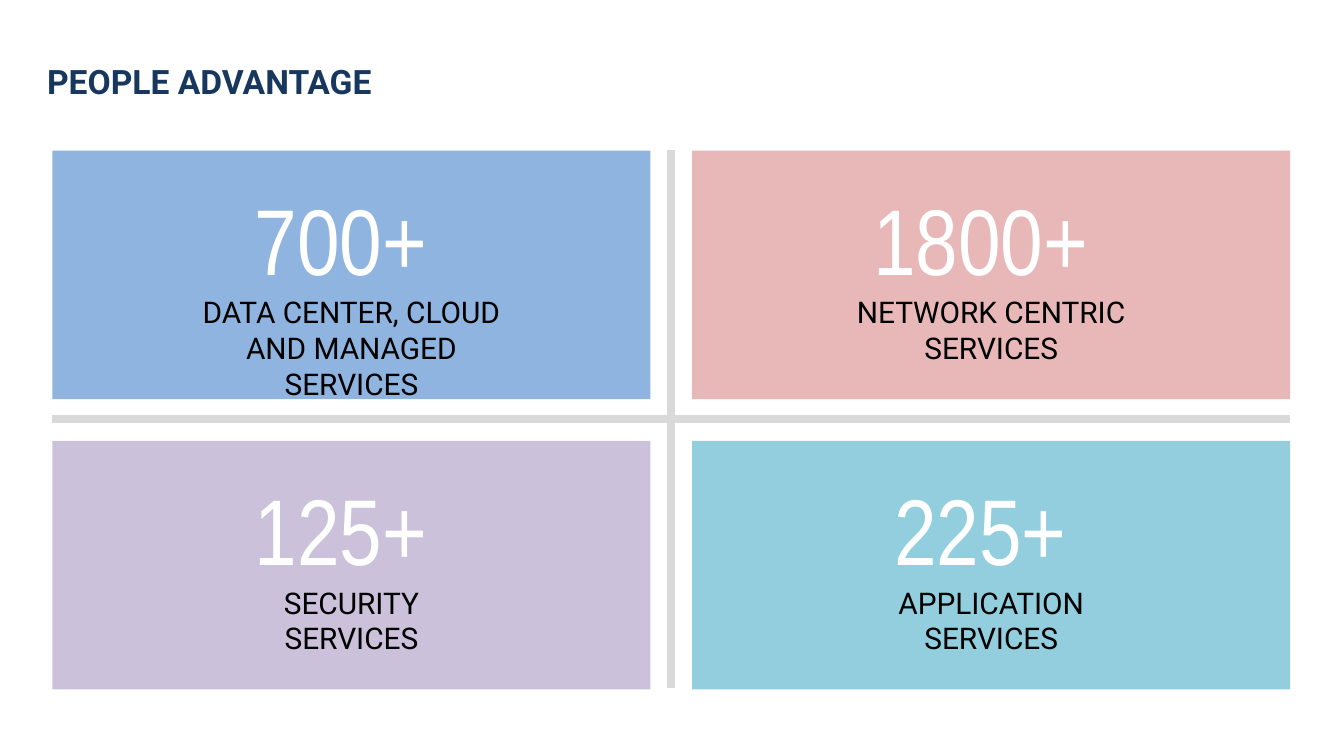
"""Build the People Advantage slide: four headcount tiles around a grey cross."""
from lxml import etree
from pptx import Presentation
from pptx.dml.color import RGBColor
from pptx.enum.shapes import MSO_CONNECTOR as CONN, MSO_SHAPE as SHAPE
from pptx.enum.text import MSO_ANCHOR as ANCHOR, MSO_AUTO_SIZE as AUTO, PP_ALIGN as ALIGN
from pptx.oxml.ns import qn
from pptx.util import Inches, Pt

COLORS = {
    "title": "17375E", "rule": "D9D9D9", "number": "FFFFFF", "label": "000000",
    "blue": "8FB4E0", "purple": "CBC1DB", "pink": "E7B8B7", "teal": "92CEDE",
}
LEFT, TOP, TILE_W, TILE_H = 0.39, 1.12, 4.45, 1.85
STEP_X, STEP_Y = 4.76, 2.16
RIGHT, BOTTOM = LEFT + STEP_X + TILE_W, 5.12
MID_X, MID_Y = 4.99, 3.12
TEXT_W, TEXT_H = 2.62, 1.48

TILES = [
    (0, 0, "blue", "700+ ", ["DATA CENTER, CLOUD AND MANAGED SERVICES"]),
    (1, 0, "pink", "1800+ ", ["NETWORK CENTRIC", "SERVICES"]),
    (0, 1, "purple", "125+ ", ["SECURITY", "SERVICES"]),
    (1, 1, "teal", "225+ ", ["APPLICATION", "SERVICES"]),
]


def add_run(p, text, size, font, color, bold=False):
    r = p.add_run()
    r.text = text
    r.font.size = Pt(size)
    r.font.name = font
    r.font.bold = bold
    r.font.color.rgb = RGBColor.from_string(COLORS[color])


prs = Presentation()
prs.slide_width, prs.slide_height = Inches(10), Inches(10 * 9 / 16)
s = prs.slides.add_slide(prs.slide_layouts[5])

title = s.shapes.title
title.left, title.top = Inches(0.35), Inches(0.4)
title.width, title.height = Inches(8.24), Inches(0.4)
tf = title.text_frame
tf.margin_left = 0
tf.vertical_anchor = ANCHOR.MIDDLE
tf.auto_size = AUTO.SHAPE_TO_FIT_TEXT
tf.paragraphs[0].alignment = ALIGN.LEFT
add_run(tf.paragraphs[0], "PEOPLE ADVANTAGE", 18, "Roboto", "title", True)

for ends in [(MID_X, TOP, MID_X, BOTTOM), (LEFT, MID_Y, RIGHT, MID_Y)]:
    rule = s.shapes.add_connector(CONN.STRAIGHT, *[Inches(v) for v in ends])
    rule.line.color.rgb = RGBColor.from_string(COLORS["rule"])
    rule.line.width = Pt(4.25)
    etree.SubElement(rule._element.spPr, qn("a:effectLst"))

for col, row, color, number, label in TILES:
    x, y = LEFT + col * STEP_X, TOP + row * STEP_Y
    sp = s.shapes.add_shape(SHAPE.RECTANGLE, Inches(x), Inches(y), Inches(TILE_W), Inches(TILE_H))
    sp.shadow.inherit = False
    sp.fill.solid()
    sp.fill.fore_color.rgb = RGBColor.from_string(COLORS[color])
    sp.line.fill.background()

    box = s.shapes.add_textbox(Inches(x + (TILE_W - TEXT_W) / 2), Inches(y + (TILE_H - TEXT_H) / 2),
                               Inches(TEXT_W), Inches(TEXT_H))
    tf = box.text_frame
    tf.word_wrap = True
    tf.auto_size = AUTO.SHAPE_TO_FIT_TEXT
    p = tf.paragraphs[0]
    p.alignment = ALIGN.CENTER
    add_run(p, number, 50, "Arial Narrow", "number")
    p = tf.add_paragraph()
    p.alignment = ALIGN.CENTER
    for i, line in enumerate(label):
        if i:
            p.add_line_break()
        add_run(p, line, 16, "Roboto", "label")

prs.save("out.pptx")
